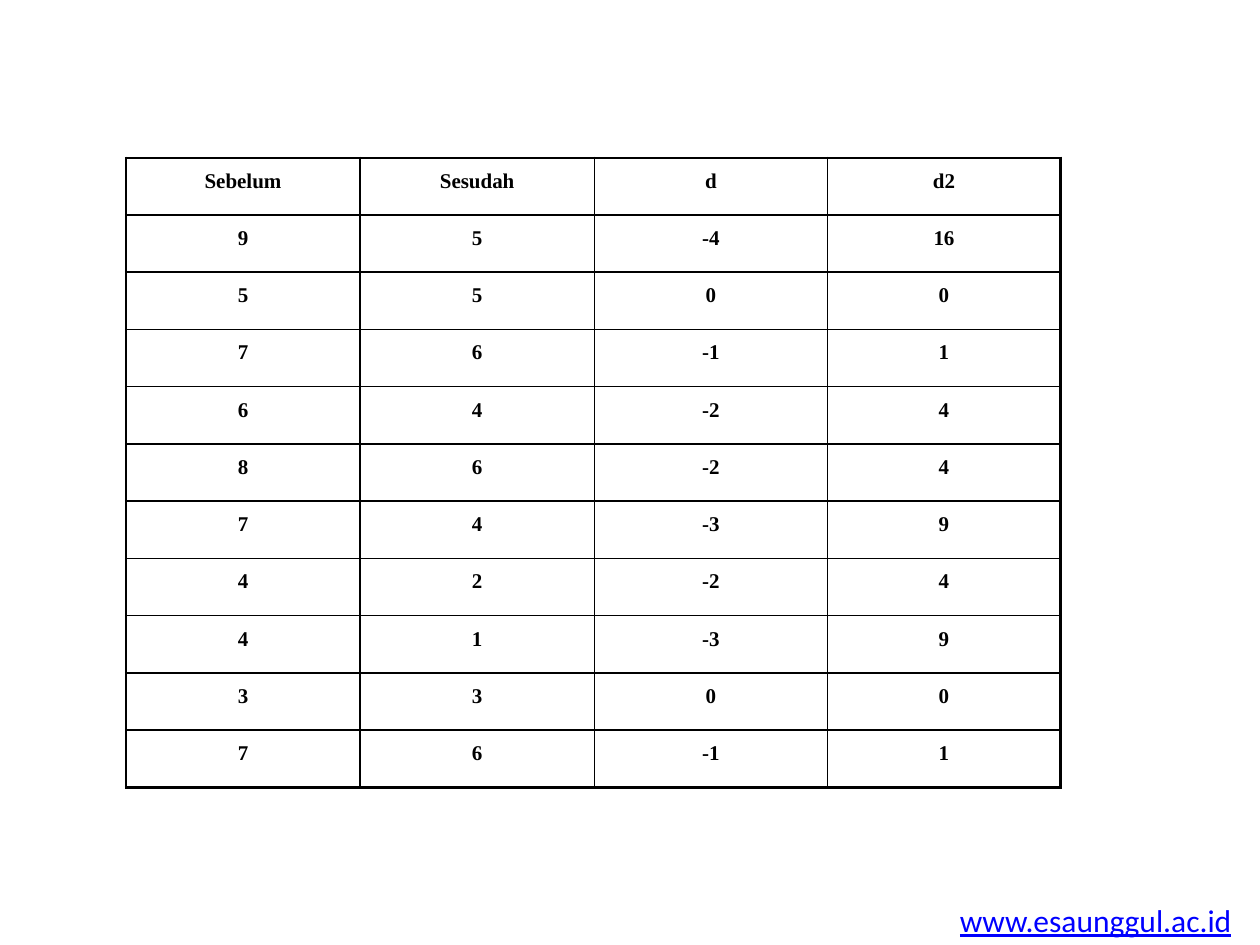
from dataclasses import dataclass

from lxml import etree
from pptx import Presentation
from pptx import util as u
from pptx.dml import color
from pptx.enum import text
from pptx.oxml import ns


@dataclass(frozen=True)
class Theme:
    ink: str = "000000"
    link: str = "0000FF"
    table_font: str = "Times New Roman"
    link_font: str = "Calibri"
    table_size: int = 12
    link_size: int = 18
    outer_line: float = 1.5
    inner_line: float = 1


THEME = Theme()
HEADINGS = ["Sebelum", "Sesudah", "d", "d2"]
SCORES = [(9, 5), (5, 5), (7, 6), (6, 4), (8, 6),
          (7, 4), (4, 2), (4, 1), (3, 3), (7, 6)]
COLUMN_WIDTHS = [4.72, 4.72, 4.7, 4.7]
TABLE_HEIGHT = 12.7


def add_run(p, words, font, size, rgb):
    r = p.add_run()
    r.text = words
    r.font.name = font
    r.font.size = u.Pt(size)
    r.font.color.rgb = color.RGBColor.from_string(rgb)
    return r


def add_border(cell, side, width):
    """Draw one side of a cell: L, R, T or B, in that order."""
    ln = etree.SubElement(cell._tc.get_or_add_tcPr(), ns.qn(f"a:ln{side}"),
                          w=str(u.Pt(width)))
    fill = etree.SubElement(ln, ns.qn("a:solidFill"))
    etree.SubElement(fill, ns.qn("a:srgbClr"), val=THEME.ink)


def fill_cell(cell, words, outer_sides):
    cell.margin_left = cell.margin_right = u.Cm(0.18)
    cell.margin_top = cell.margin_bottom = 0
    for side in "LRTB":
        add_border(cell, side,
                   THEME.outer_line if side in outer_sides else THEME.inner_line)
    cell.fill.background()
    p = cell.text_frame.paragraphs[0]
    p.alignment = text.PP_ALIGN.CENTER
    p.line_spacing = 1.5
    r = add_run(p, words, THEME.table_font, THEME.table_size, THEME.ink)
    r.font.bold = True


def add_score_table(s):
    rows = [HEADINGS]
    for before, after in SCORES:
        d = after - before
        rows.append([before, after, d, d * d])
    last_row, last_col = len(rows) - 1, len(HEADINGS) - 1
    table = s.shapes.add_table(len(rows), len(HEADINGS), u.Cm(2.54), u.Cm(3.18),
                               u.Cm(sum(COLUMN_WIDTHS)), u.Cm(TABLE_HEIGHT)).table
    for column, width in zip(table.columns, COLUMN_WIDTHS):
        column.width = u.Cm(width)
    for i, row in enumerate(rows):
        table.rows[i].height = u.Cm(TABLE_HEIGHT / len(rows))
        for j, value in enumerate(row):
            edges = {"L": j == 0, "R": j == last_col,
                     "T": i == 0, "B": i == last_row}
            outer_sides = [side for side, outer in edges.items() if outer]
            fill_cell(table.cell(i, j), str(value), outer_sides)


def add_web_address(s):
    box = s.shapes.add_textbox(u.Cm(19.1), u.Cm(18.03), u.Cm(6.05), u.Cm(1.02))
    tf = box.text_frame
    tf.word_wrap = False
    tf.auto_size = text.MSO_AUTO_SIZE.SHAPE_TO_FIT_TEXT
    r = add_run(tf.paragraphs[0], "www.esaunggul.ac.id",
                THEME.link_font, THEME.link_size, THEME.link)
    r.font.underline = True


def main():
    prs = Presentation()
    prs.slide_width, prs.slide_height = u.Cm(25.4), u.Cm(19.05)
    s = prs.slides.add_slide(prs.slide_layouts[6])
    add_web_address(s)
    add_score_table(s)
    prs.save("out.pptx")


if __name__ == "__main__":
    main()
